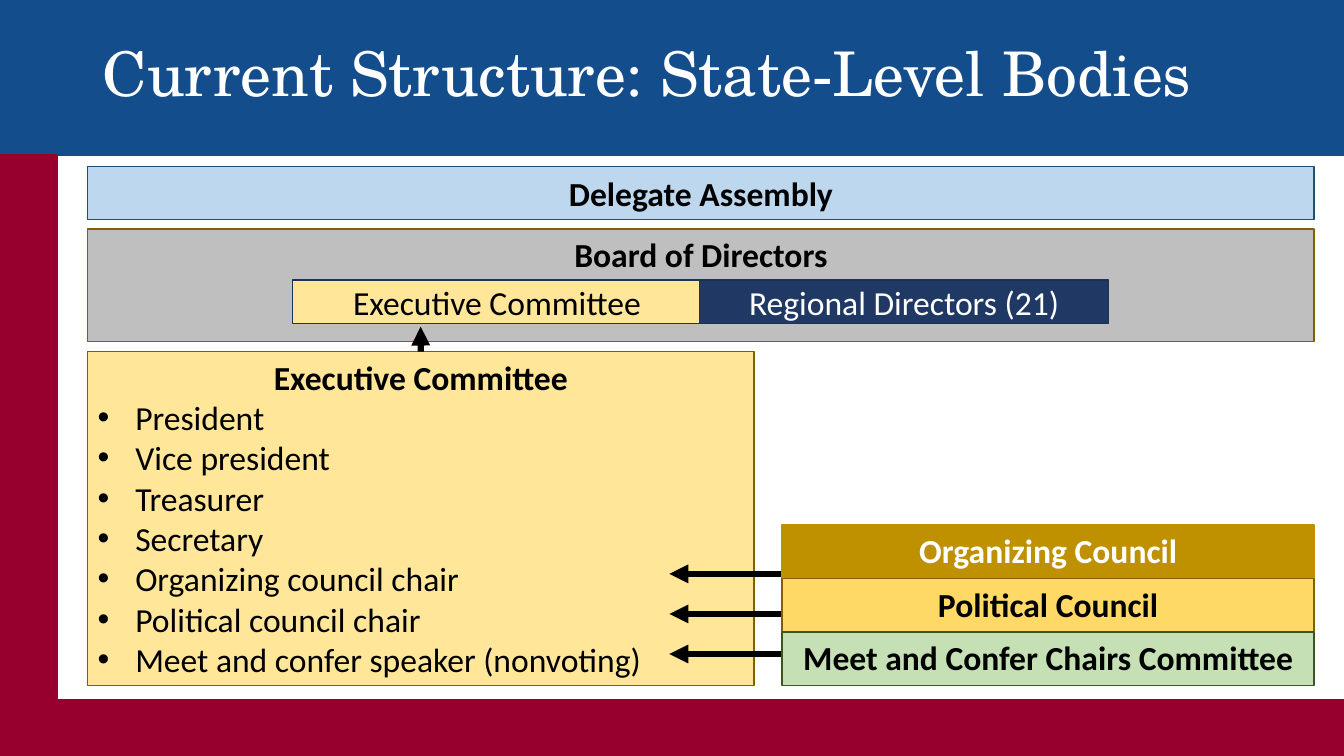
from pptx import Presentation
from pptx.dml.color import RGBColor
from pptx.enum.shapes import MSO_CONNECTOR, MSO_SHAPE
from pptx.enum.text import MSO_ANCHOR, PP_ALIGN
from pptx.oxml.ns import qn
from pptx.util import Cm, Pt
from lxml import etree

RECTANGLE = MSO_SHAPE.RECTANGLE
STRAIGHT = MSO_CONNECTOR.STRAIGHT
TOP, MIDDLE = MSO_ANCHOR.TOP, MSO_ANCHOR.MIDDLE
LEFT, CENTER = PP_ALIGN.LEFT, PP_ALIGN.CENTER

BLACK = RGBColor(0x00, 0x00, 0x00)
WHITE = RGBColor(0xFF, 0xFF, 0xFF)
BLUE = RGBColor(0x13, 0x4D, 0x8C)
CRIMSON = RGBColor(0x97, 0x00, 0x2E)
GRAY = RGBColor(0xBF, 0xBF, 0xBF)
PALE_BLUE = RGBColor(0xBD, 0xD7, 0xEE)
STEEL = RGBColor(0x1F, 0x4E, 0x79)
NAVY = RGBColor(0x20, 0x38, 0x64)
DARK_NAVY = RGBColor(0x1E, 0x32, 0x56)
CREAM = RGBColor(0xFF, 0xE6, 0x99)
YELLOW = RGBColor(0xFF, 0xD9, 0x66)
GOLD = RGBColor(0xBF, 0x90, 0x00)
BROWN = RGBColor(0x80, 0x60, 0x00)
PALE_GREEN = RGBColor(0xC5, 0xE0, 0xB4)
GREEN = RGBColor(0x38, 0x57, 0x23)

PAGE_WIDTH, PAGE_HEIGHT = 33.87, 19.05
HEADER_HEIGHT, SIDE_WIDTH, FOOTER_HEIGHT = 3.91, 1.45, 1.43
MARGIN, CONTENT_WIDTH = 2.21, 30.91
COUNCIL_LEFT, COUNCIL_TOP = 19.71, 13.23
COUNCIL_WIDTH, ROW_HEIGHT = 13.41, 1.35

OFFICERS = (
    "President",
    "Vice president",
    "Treasurer",
    "Secretary",
    "Organizing council chair",
    "Political council chair",
    "Meet and confer speaker (nonvoting)",
)
MEMBERS = (
    ("Executive Committee", 7.37, CREAM, BLACK),
    ("Regional Directors (21)", 17.63, NAVY, WHITE),
)
COUNCILS = (
    ("Organizing Council", GOLD, GOLD, WHITE),
    ("Political Council", YELLOW, BROWN, BLACK),
    ("Meet and Confer Chairs Committee", PALE_GREEN, GREEN, BLACK),
)


class StructurePage:
    """Draw styled elements on the current slide."""

    body_font, title_font = "Calibri", "TeX Gyre Schola"
    body_size, title_size = 24, 44

    def __init__(self, page):
        self.page = page

    def box(self, left, top, width, height, fill, outline, anchor=TOP):
        box = self.page.shapes.add_shape(
            RECTANGLE, Cm(left), Cm(top), Cm(width), Cm(height))
        box.shadow.inherit = False
        box.fill.solid()
        box.fill.fore_color.rgb = fill
        box.line.color.rgb = outline
        box.line.width = Pt(1)
        box.text_frame.word_wrap = True
        box.text_frame.vertical_anchor = anchor
        return box

    def add_span(self, para, text, color=BLACK, bold=False, align=CENTER):
        para.alignment = align
        span = para.add_run()
        span.text = text
        span.font.name = self.body_font
        span.font.size = Pt(self.body_size)
        span.font.bold = bold
        span.font.color.rgb = color
        return span

    def label(self, box, text, color=BLACK, bold=True):
        self.add_span(box.text_frame.paragraphs[0], text, color, bold)

    def bullet(self, box, text):
        para = box.text_frame.add_paragraph()
        properties = para._p.get_or_add_pPr()
        properties.set("marL", str(Cm(0.95)))
        properties.set("indent", str(-Cm(0.95)))
        font = etree.SubElement(properties, qn("a:buFont"))
        font.set("typeface", "Arial")
        mark = etree.SubElement(properties, qn("a:buChar"))
        mark.set("char", "•")
        self.add_span(para, text, align=LEFT)

    def title(self, text):
        box = self.page.shapes.add_textbox(
            Cm(2.34), Cm(0.1), Cm(29.21), Cm(3.68))
        box.text_frame.word_wrap = True
        box.text_frame.vertical_anchor = MIDDLE
        para = box.text_frame.paragraphs[0]
        para.line_spacing = 0.9
        span = self.add_span(para, text, WHITE, align=LEFT)
        span.font.name = self.title_font
        span.font.size = Pt(self.title_size)

    def arrow(self, start_x, start_y, end_x, end_y):
        arrow = self.page.shapes.add_connector(
            STRAIGHT, Cm(start_x), Cm(start_y), Cm(end_x), Cm(end_y))
        arrow.line.color.rgb = BLACK
        arrow.line.width = Pt(4.5)
        properties = arrow._element.spPr
        head = etree.SubElement(properties.find(qn("a:ln")), qn("a:tailEnd"))
        head.set("type", "triangle")
        etree.SubElement(properties, qn("a:effectLst"))
        return arrow


def main():
    deck = Presentation()
    deck.slide_width, deck.slide_height = Cm(PAGE_WIDTH), Cm(PAGE_HEIGHT)
    page = StructurePage(deck.slides.add_slide(deck.slide_layouts[6]))

    page.box(0, 0, PAGE_WIDTH, HEADER_HEIGHT, BLUE, BLUE)
    page.box(0, HEADER_HEIGHT, SIDE_WIDTH, PAGE_HEIGHT - HEADER_HEIGHT,
             CRIMSON, CRIMSON)
    page.box(SIDE_WIDTH, PAGE_HEIGHT - FOOTER_HEIGHT,
             PAGE_WIDTH - SIDE_WIDTH, FOOTER_HEIGHT, CRIMSON, CRIMSON)
    page.title("Current Structure: State-Level Bodies")

    board = page.box(MARGIN, 5.77, CONTENT_WIDTH, 2.84, GRAY, BROWN)
    page.label(board, "Board of Directors")
    for text, left, fill, color in MEMBERS:
        member = page.box(left, 7.06, 10.31, 1.09, fill, DARK_NAVY, MIDDLE)
        page.label(member, text, color, bold=False)
    assembly = page.box(MARGIN, 4.19, CONTENT_WIDTH, ROW_HEIGHT,
                        PALE_BLUE, STEEL, MIDDLE)
    page.label(assembly, "Delegate Assembly")

    committee = page.box(MARGIN, 8.86, 16.79, 8.41, CREAM, BROWN)
    page.label(committee, "Executive Committee")
    for officer in OFFICERS:
        page.bullet(committee, officer)
    page.arrow(10.6, 8.86, 10.6, 8.23).begin_connect(committee, 0)

    for row in range(len(COUNCILS)):
        arrow_y = 14.46 + row * 1.01
        page.arrow(21.64, arrow_y, 16.87, arrow_y)
    for row, (text, fill, outline, color) in enumerate(COUNCILS):
        council = page.box(COUNCIL_LEFT, COUNCIL_TOP + row * ROW_HEIGHT,
                           COUNCIL_WIDTH, ROW_HEIGHT, fill, outline)
        page.label(council, text, color)

    deck.save("out.pptx")


if __name__ == "__main__":
    main()
